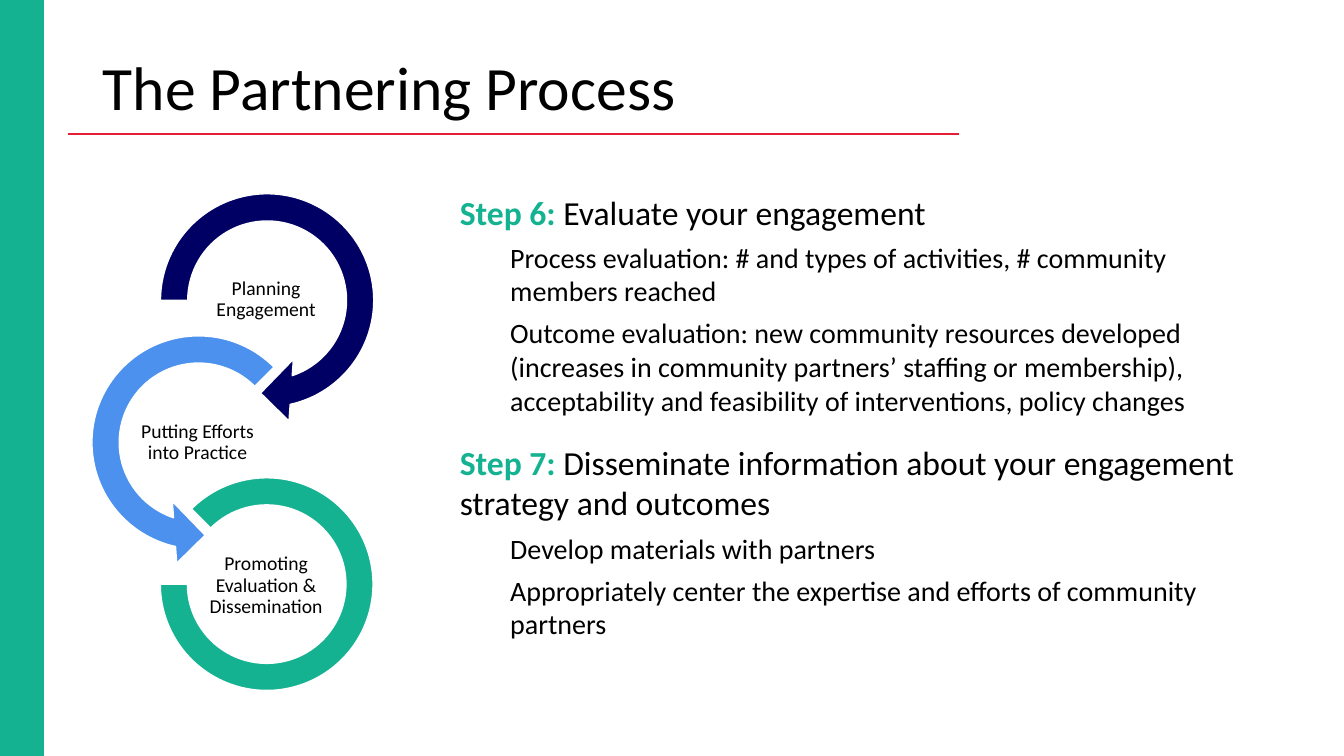
from dataclasses import dataclass

from lxml.etree import SubElement
from pptx import Presentation
from pptx.dml.color import RGBColor
from pptx.enum.shapes import MSO_CONNECTOR, MSO_SHAPE as Preset
from pptx.enum.text import MSO_ANCHOR as Anchor, MSO_AUTO_SIZE as AutoSize, PP_ALIGN as Align
from pptx.oxml.ns import qn
from pptx.util import Inches, Pt


@dataclass(frozen=True)
class Theme:
    font: str = "Calibri"
    green: str = "15B292"
    navy: str = "000064"
    blue: str = "4B91ED"
    red: str = "E71D36"
    black: str = "000000"
    white: str = "FFFFFF"
    title: int = 44
    step: int = 24
    detail: int = 20
    label: int = 14


@dataclass(frozen=True)
class Stage:
    label: str
    preset: Preset
    color: str
    left: float
    top: float
    size: float
    adjustments: tuple
    label_left: float
    label_top: float


@dataclass(frozen=True)
class Step:
    name: str
    summary: str
    details: tuple


THEME = Theme()

STAGES = (
    Stage("Planning Engagement", Preset.CIRCULAR_ARROW, THEME.navy, 1.42, 1.75, 2.46,
          (0.1098, 11.423, 45, 108, 0.125), 1.96, 2.63),
    Stage("Putting Efforts into Practice", Preset.LEFT_CIRCULAR_ARROW, THEME.blue, 0.74, 3.16, 2.46,
          (0.1098, 11.423, 63, 189, 0.125), 1.28, 4.05),
    Stage("Promoting Evaluation & Dissemination", Preset.BLOCK_ARC, THEME.green, 1.59, 4.74, 2.11,
          (135, 108, 0.1274), 1.96, 5.47),
)

STEPS = (
    Step("Step 6: ", "Evaluate your engagement", (
        "Process evaluation: # and types of activities, # community members reached",
        "Outcome evaluation: new community resources developed (increases in community "
        "partners’ staffing or membership), acceptability and feasibility of interventions, "
        "policy changes")),
    Step("Step 7: ", "Disseminate information about your engagement strategy and outcomes", (
        "Develop materials with partners",
        "Appropriately center the expertise and efforts of community partners")),
)


def apply(target, values: dict) -> None:
    for name, value in values.items():
        setattr(target, name, value)


def place(box, left: float, top: float, width: float, height: float) -> None:
    apply(box, {"left": Inches(left), "top": Inches(top),
                "width": Inches(width), "height": Inches(height)})


def add_span(para, text: str, size: int, color: str = THEME.black, bold: bool = False) -> None:
    span = para.add_run()
    span.text = text
    apply(span.font, {"name": THEME.font, "size": Pt(size), "bold": bold})
    span.font.color.rgb = RGBColor.from_string(color)


def add_preset(page, preset: Preset, bounds: tuple, color: str, outline: str):
    shape = page.shapes.add_shape(preset, *map(Inches, bounds))
    shape.shadow.inherit = False
    shape.fill.solid()
    shape.fill.fore_color.rgb = RGBColor.from_string(color)
    shape.line.color.rgb = RGBColor.from_string(outline)
    shape.line.width = Pt(1)
    return shape


def add_title(page, text: str) -> None:
    box = page.shapes.title
    place(box, 0.92, 0.47, 11.5, 0.86)
    apply(box.text_frame, {"vertical_anchor": Anchor.MIDDLE, "auto_size": AutoSize.NONE})
    para = box.text_frame.paragraphs[0]
    apply(para, {"alignment": Align.LEFT, "line_spacing": 0.9})
    add_span(para, text, THEME.title)


def add_rule(page) -> None:
    rule = page.shapes.add_connector(
        MSO_CONNECTOR.STRAIGHT, Inches(0.67), Inches(1.33), Inches(9.51), Inches(1.33))
    rule.line.color.rgb = RGBColor.from_string(THEME.red)
    rule.line.width = Pt(1.5)
    SubElement(rule._element.spPr, qn("a:effectLst"))


def add_stage(page, stage: Stage) -> None:
    bounds = (stage.left, stage.top, stage.size, stage.size)
    arc = add_preset(page, stage.preset, bounds, stage.color, THEME.white)
    for index, value in enumerate(stage.adjustments):
        arc.adjustments[index] = value

    box = page.shapes.add_textbox(
        *map(Inches, (stage.label_left, stage.label_top, 1.36, 0.68)))
    margins = {f"margin_{side}": Inches(0.01) for side in ("left", "top", "right", "bottom")}
    apply(box.text_frame, {"word_wrap": True, "vertical_anchor": Anchor.MIDDLE, **margins})
    para = box.text_frame.paragraphs[0]
    apply(para, {"alignment": Align.CENTER, "line_spacing": 0.9})
    add_span(para, stage.label, THEME.label)


def add_body_para(frame, indent: float, space_after: int):
    first = frame.paragraphs[0]
    para = frame.add_paragraph() if first.runs else first
    properties = para._p.get_or_add_pPr()
    properties.set("marL", str(Inches(indent)))
    properties.set("indent", "0")
    SubElement(properties, qn("a:buNone"))
    apply(para, {"alignment": Align.LEFT, "line_spacing": 1.0,
                 "space_before": Pt(0), "space_after": Pt(space_after)})
    return para


def add_steps(page, steps: tuple) -> None:
    box = page.placeholders[1]
    place(box, 4.46, 1.85, 8.33, 4.68)
    frame = box.text_frame
    apply(frame, {"word_wrap": True, "vertical_anchor": Anchor.TOP, "auto_size": AutoSize.NONE})
    for step in steps:
        para = add_body_para(frame, 0, 6)
        add_span(para, step.name, THEME.step, THEME.green, bold=True)
        add_span(para, step.summary, THEME.step)
        for detail in step.details:
            closes_step = detail == step.details[-1] and step != steps[-1]
            para = add_body_para(frame, 0.5, 18 if closes_step else 6)
            add_span(para, detail, THEME.detail)


def main() -> None:
    deck = Presentation()
    apply(deck, {"slide_width": Inches(13.33), "slide_height": Inches(7.5)})
    page = deck.slides.add_slide(deck.slide_layouts[1])

    # Side band, title and rule
    add_preset(page, Preset.RECTANGLE, (0, 0, 0.43, 7.5), THEME.green, THEME.green)
    add_title(page, "The Partnering Process")
    add_rule(page)

    # Chain of stages
    for stage in STAGES:
        add_stage(page, stage)

    # Steps of the last stage
    add_steps(page, STEPS)
    deck.save("out.pptx")


if __name__ == "__main__":
    main()
